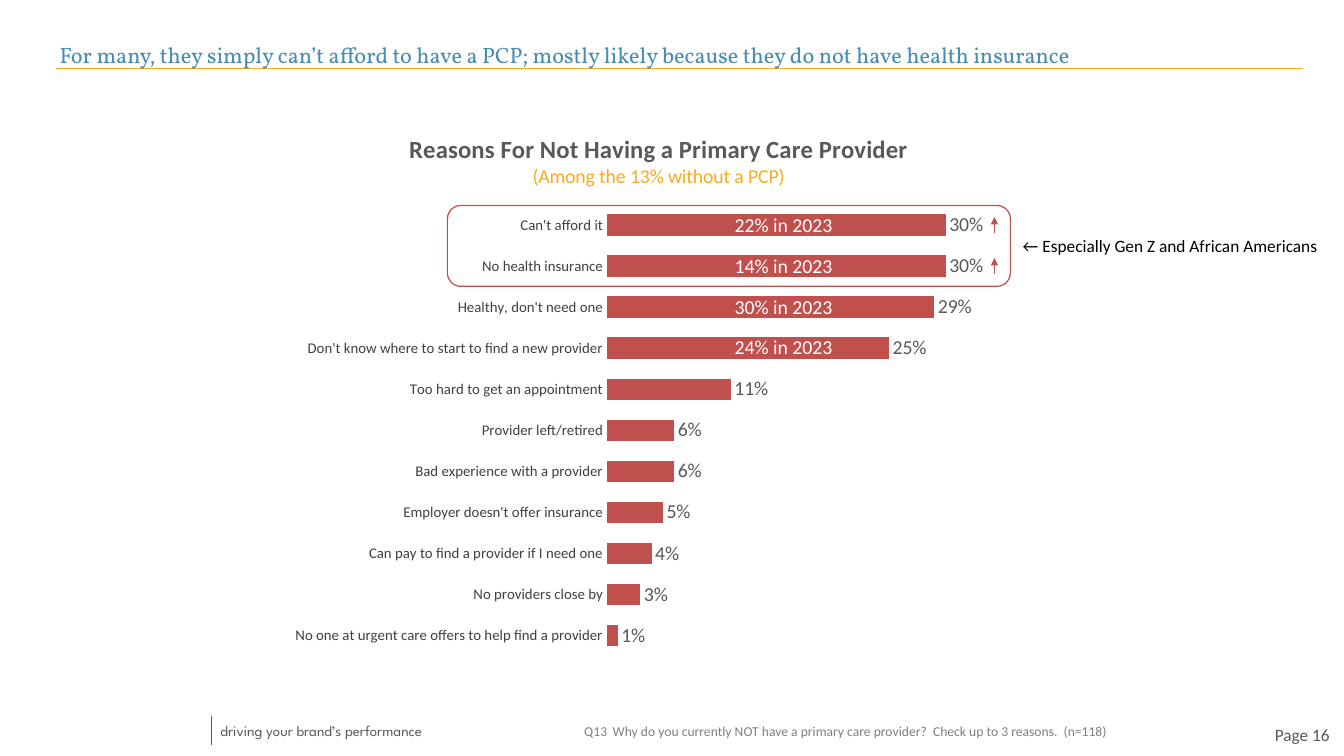
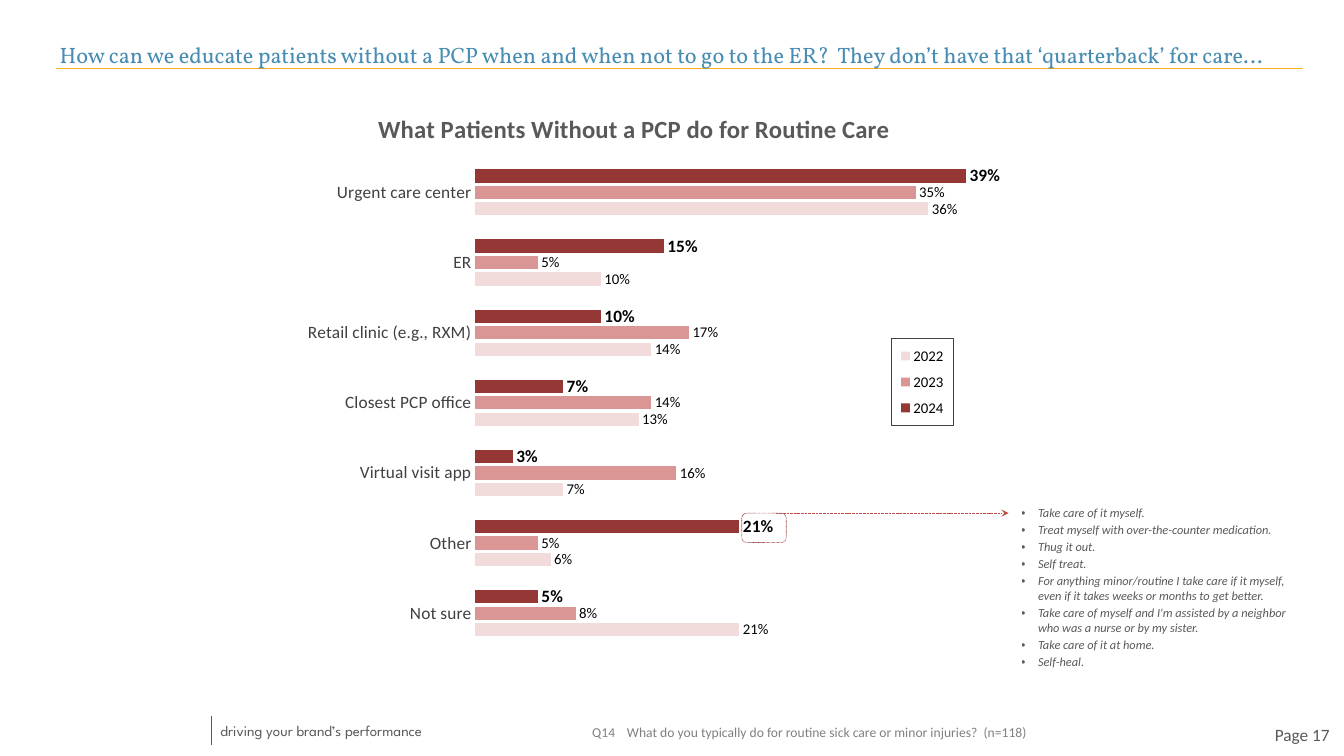
from lxml import etree
from pptx import Presentation
from pptx.chart.data import CategoryChartData
from pptx.dml.color import RGBColor
from pptx.enum.chart import XL_CHART_TYPE, XL_LEGEND_POSITION, XL_LABEL_POSITION, XL_TICK_MARK
from pptx.enum.dml import MSO_LINE as DASH
from pptx.enum.shapes import MSO_CONNECTOR, MSO_SHAPE
from pptx.enum.text import MSO_ANCHOR as ANCHOR, PP_ALIGN as ALIGN
from pptx.oxml import parse_xml
from pptx.oxml.ns import nsdecls, qn
from pptx.util import Pt

PX = 9144
BODY, HEADING, TAGLINE = "Calibri", "Vollkorn", "League Spartan"
GREY, DARK, BLACK, WHITE = "595959", "404040", "000000", "FFFFFF"
MUTED, BLUE, GOLD, RED, MAROON = "808080", "478CB2", "FAAB1C", "C0504D", "953735"
color = RGBColor.from_string


def add_text(slide, text, box, size=16, hue=GREY, face=BODY, align=ALIGN.LEFT,
             anchor=ANCHOR.TOP, inset=(10, 5), tab=None):
    frame = slide.shapes.add_textbox(*[v * PX for v in box]).text_frame
    frame.word_wrap = True
    frame.vertical_anchor = anchor
    frame.margin_left = frame.margin_right = inset[0] * PX
    frame.margin_top = frame.margin_bottom = inset[1] * PX
    paragraph = frame.paragraphs[0]
    paragraph.alignment = align
    if tab:
        stops = etree.SubElement(paragraph._p.get_or_add_pPr(), qn("a:tabLst"))
        etree.SubElement(stops, qn("a:tab"), pos=str(tab * PX), algn="l")
    run = paragraph.add_run()
    run.text = text
    run.font.size, run.font.name = Pt(size), face
    run.font.color.rgb = color(hue)


def add_line(slide, ends, hue, width, head=None, dash=None):
    line = slide.shapes.add_connector(MSO_CONNECTOR.STRAIGHT, *[v * PX for v in ends])
    line.line.color.rgb = color(hue)
    line.line.width = Pt(width)
    if dash:
        line.line.dash_style = dash
    properties = line._element.spPr
    if head:
        etree.SubElement(properties.find(qn("a:ln")), qn("a:tailEnd"), type=head)
    etree.SubElement(properties, qn("a:effectLst"))


pages = [
    dict(
        number=16,
        headline="For many, they simply can’t afford to have a PCP; mostly likely because they do not have health insurance",
        question="Q13\tWhy do you currently NOT have a primary care provider?  Check up to 3 reasons.  (n=118)",
        question_box=(647, 808, 633, 29), tab=32,
        chart_box=(81, 142, 1158, 608), plot_box=(601, 88, 445, 508), title_at=(376, 4),
        title="Reasons For Not Having a Primary Care Provider",
        subtitle="(Among the 13% without a PCP)",
        categories=["Can't afford it", "No health insurance", "Healthy, don't need one",
                    "Don't know where to start to find a new provider",
                    "Too hard to get an appointment", "Provider left/retired",
                    "Bad experience with a provider", "Employer doesn't offer insurance",
                    "Can pay to find a provider if I need one", "No providers close by",
                    "No one at urgent care offers to help find a provider"],
        category_size=12, gap=91, overlap=0, top_value=0.35, legend_box=None,
        series=[("Series 1", RED, 16, GREY, False,
                 (0.3, 0.3, 0.29, 0.25, 0.11, 0.06, 0.06, 0.05, 0.04, 0.03, 0.01))],
    ),
    dict(
        number=17,
        headline="How can we educate patients without a PCP when and when not to go to the ER?  They don’t have that ‘quarterback’ for care…",
        question="Q14\tWhat do you typically do for routine sick care or minor injuries?  (n=118)",
        question_box=(656, 809, 533, 29), tab=39,
        chart_box=(97, 114, 1195, 618), plot_box=(437, 63, 637, 552), title_at=(323, 6),
        title="What Patients Without a PCP do for Routine Care", subtitle=None,
        categories=["Urgent care center", "ER", "Retail clinic (e.g., RXM)", "Closest PCP office",
                    "Virtual visit app", "Other", "Not sure"],
        category_size=14, gap=182, overlap=-25, top_value=0.45, legend_box=(905, 267, 70, 97),
        series=[("2024", MAROON, 14, BLACK, True, (0.39, 0.15, 0.1, 0.07, 0.03, 0.21, 0.05)),
                ("2023", "D99694", 12, BLACK, False, (0.35, 0.05, 0.17, 0.14, 0.16, 0.05, 0.08)),
                ("2022", "F2DCDB", 12, BLACK, False, (0.36, 0.1, 0.14, 0.13, 0.07, 0.06, 0.21))],
    ),
]

deck = Presentation()
deck.slide_width, deck.slide_height = 1511 * PX, 850 * PX
slides = []

for page in pages:
    slide = deck.slides.add_slide(deck.slide_layouts[6])
    slides.append(slide)
    add_line(slide, (1465, 77, 63, 77), GOLD, 1)
    add_line(slide, (238, 805, 238, 838), GREY, 0.75)
    add_text(slide, "driving your brand’s performance", (238, 806, 295, 30), size=12, face=TAGLINE)
    add_text(slide, page["headline"], (56, 37, 1408, 45), size=18, hue=BLUE, face=HEADING,
             anchor=ANCHOR.BOTTOM, inset=(11, 6))
    add_text(slide, f"Page {page['number']}", (1375, 810, 131, 33), size=14, align=ALIGN.RIGHT,
             anchor=ANCHOR.MIDDLE, inset=(11, 6))
    add_text(slide, page["question"], page["question_box"], size=11, hue=MUTED, tab=page["tab"])

    data = CategoryChartData(number_format="0%")
    data.categories = page["categories"]
    for name, *_, values in page["series"]:
        data.add_series(name, values)
    chart = slide.shapes.add_chart(XL_CHART_TYPE.BAR_CLUSTERED,
                                   *[v * PX for v in page["chart_box"]], data).chart
    chart.font.size, chart.font.name = Pt(10), BODY
    chart.font.color.rgb = color(BLACK)

    heading = chart.chart_title.text_frame
    title_lines = [(page["title"], 20, GREY, True)]
    if page["subtitle"]:
        title_lines.append((page["subtitle"], 16, GOLD, False))
    for index, (words, size, hue, bold) in enumerate(title_lines):
        paragraph = heading.add_paragraph() if index else heading.paragraphs[0]
        run = paragraph.add_run()
        run.text = words
        run.font.size, run.font.bold, run.font.name = Pt(size), bold, BODY
        run.font.color.rgb = color(hue)

    reasons = chart.category_axis
    reasons.reverse_order = True
    reasons.major_tick_mark = reasons.minor_tick_mark = XL_TICK_MARK.NONE
    reasons.format.line.fill.background()
    reasons.tick_labels.font.size = Pt(page["category_size"])
    reasons.tick_labels.font.name = BODY
    reasons.tick_labels.font.color.rgb = color(DARK)
    shares = chart.value_axis
    shares.minimum_scale, shares.maximum_scale = 0, page["top_value"]
    shares.has_major_gridlines = False
    shares.visible = False

    bars = chart.plots[0]
    bars.vary_by_categories = False
    bars.gap_width, bars.overlap = page["gap"], page["overlap"]
    for series, (_, fill, size, hue, bold, _) in zip(bars.series, page["series"]):
        series.format.fill.solid()
        series.format.fill.fore_color.rgb = color(fill)
        series.invert_if_negative = False
        labels = series.data_labels
        labels.show_value = True
        labels.number_format, labels.number_format_is_linked = "0%", False
        labels.position = XL_LABEL_POSITION.OUTSIDE_END
        labels.font.size, labels.font.bold, labels.font.name = Pt(size), bold, BODY
        labels.font.color.rgb = color(hue)

    placed = [(chart._chartSpace.chart.plotArea, 0, page["plot_box"]),
              (chart.chart_title._element, 1, page["title_at"])]
    chart.has_legend = page["legend_box"] is not None
    if chart.has_legend:
        legend = chart.legend
        legend.position = XL_LEGEND_POSITION.RIGHT
        legend.include_in_layout = False
        legend.font.size, legend.font.name = Pt(12), BODY
        legend.font.color.rgb = color(BLACK)
        legend._element.find(qn("c:txPr")).addprevious(parse_xml(
            f'<c:spPr {nsdecls("c", "a")}><a:ln w="9525"><a:solidFill>'
            f'<a:srgbClr val="{DARK}"/></a:solidFill></a:ln></c:spPr>'))
        placed.append((legend._element, 1, page["legend_box"]))
    for part, position, box in placed:
        for old in part.findall(qn("c:layout")):
            part.remove(old)
        layout = etree.Element(qn("c:layout"))
        manual = etree.SubElement(layout, qn("c:manualLayout"))
        if position == 0:
            etree.SubElement(manual, qn("c:layoutTarget"), val="inner")
        for mode in ("xMode", "yMode"):
            etree.SubElement(manual, qn(f"c:{mode}"), val="edge")
        for side, length, whole in zip("xywh", box, page["chart_box"][2:] * 2):
            etree.SubElement(manual, qn(f"c:{side}"), val=f"{length / whole:.4f}")
        part.insert(position, layout)

reasons_slide, routine_slide = slides

for row, share in enumerate(("22%", "14%", "30%", "24%")):
    add_text(reasons_slide, f"{share} in 2023", (816, 234 + 46 * row, 132, 37), hue=WHITE)
for row in range(2):
    add_line(reasons_slide, (1118, 262 + 46 * row, 1118, 244 + 46 * row), RED, 0.75, head="triangle")
add_text(reasons_slide, "← Especially Gen Z and African Americans", (1140, 259, 360, 34),
         size=14, hue=BLACK)

for slide, box, hue, width, dash in (
        (reasons_slide, (503, 231, 633, 91), RED, 1, None),
        (routine_slide, (834, 577, 50, 33), MAROON, 0.5, DASH.ROUND_DOT)):
    highlight = slide.shapes.add_shape(MSO_SHAPE.ROUNDED_RECTANGLE, *[v * PX for v in box])
    highlight.shadow.inherit = False
    highlight.fill.background()
    highlight.line.color.rgb = color(hue)
    highlight.line.width = Pt(width)
    if dash:
        highlight.line.dash_style = dash
add_line(routine_slide, (872, 577, 1134, 577), "BF4C48", 0.75, head="stealth", dash=DASH.SQUARE_DOT)

answers = [
    ("Take care of it myself.", 19),
    ("Treat myself with over-the-counter medication.", 19),
    ("Thug it out.", 19),
    ("Self treat.", 19),
    ("For anything minor/routine I take care if it myself, even if it takes weeks or months to get better.", 36),
    ("Take care of myself and I'm assisted by a neighbor who was a nurse or by my sister.", 36),
    ("Take care of it at home.", 19),
    ("Self-heal.", 19),
]
table = routine_slide.shapes.add_table(len(answers), 1, 1148 * PX, 568 * PX, 320 * PX,
                                       sum(height for _, height in answers) * PX).table
table.first_row = table.horz_banding = False
for row, (answer, height) in enumerate(answers):
    table.rows[row].height = height * PX
    cell = table.cell(row, 0)
    cell.fill.solid()
    cell.fill.fore_color.rgb = color(WHITE)
    cell.vertical_anchor = ANCHOR.MIDDLE
    cell.margin_left = cell.margin_right = 0
    cell.margin_top = cell.margin_bottom = PX
    paragraph = cell.text_frame.paragraphs[0]
    indents = paragraph._p.get_or_add_pPr()
    indents.set("marL", str(19 * PX))
    indents.set("indent", str(-19 * PX))
    etree.SubElement(indents, qn("a:buFont"), typeface="Arial")
    etree.SubElement(indents, qn("a:buChar"), char="•")
    run = paragraph.add_run()
    run.text = answer
    run.font.size, run.font.italic, run.font.name = Pt(10), True, BODY
    run.font.color.rgb = color(GREY)

deck.save("out.pptx")
